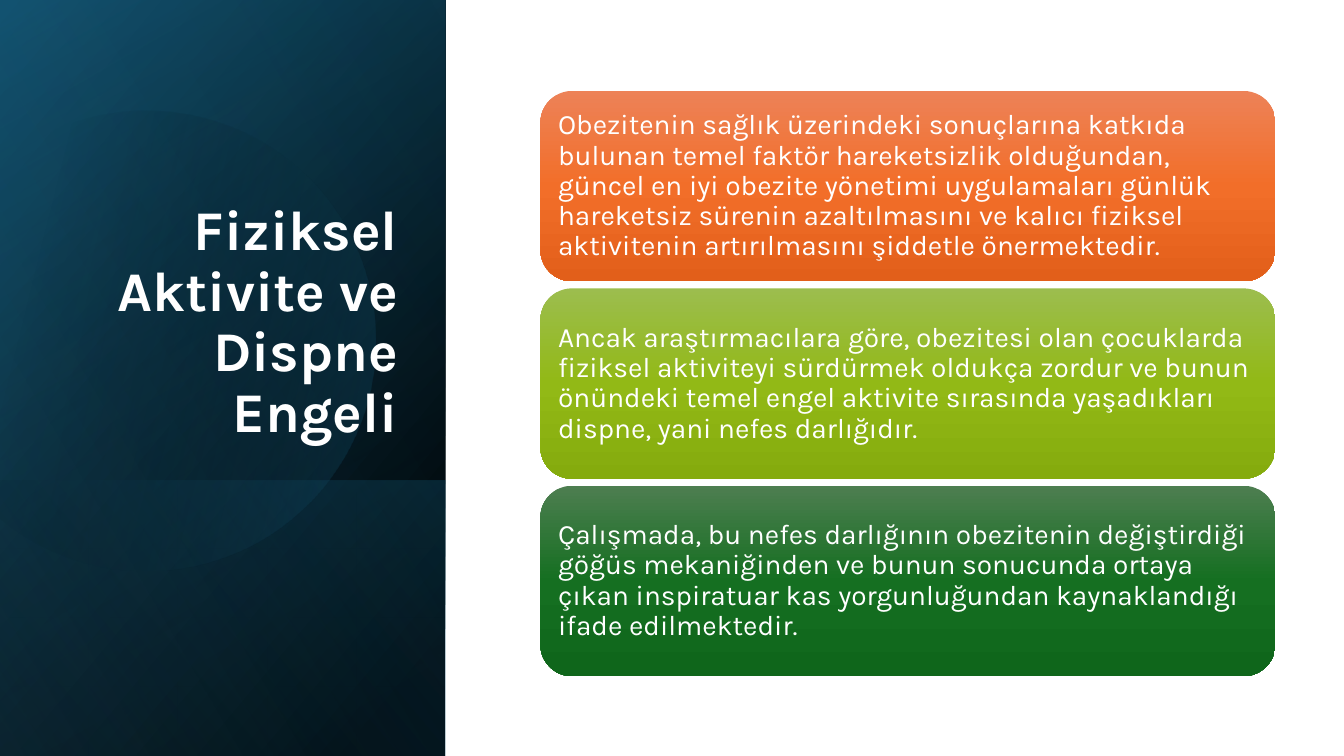
from math import cos, sin, radians
from lxml.etree import SubElement as Sub
from pptx import Presentation
from pptx.dml.color import RGBColor
from pptx.enum.shapes import MSO_SHAPE as Kind
from pptx.enum.text import MSO_ANCHOR as Anchor, MSO_AUTO_SIZE as Fit, PP_ALIGN as Align
from pptx.oxml.ns import qn
from pptx.util import Pt

WIDE, HIGH = 960, 540
SIDE = 318
TITLE = "Fiziksel Aktivite ve Dispne Engeli"
CARDS = [
    ("Obezitenin sağlık üzerindeki sonuçlarına katkıda bulunan temel faktör "
     "hareketsizlik olduğundan, güncel en iyi obezite yönetimi uygulamaları günlük "
     "hareketsiz sürenin azaltılmasını ve kalıcı fiziksel aktivitenin artırılmasını "
     "şiddetle önermektedir.", ("ED8257", "F26E29", "E25F1A")),
    ("Ancak araştırmacılara göre, obezitesi olan çocuklarda fiziksel aktiviteyi "
     "sürdürmek oldukça zordur ve bunun önündeki temel engel aktivite sırasında "
     "yaşadıkları dispne, yani nefes darlığıdır.", ("9CBD4E", "92B916", "85AB0D")),
    ("Çalışmada, bu nefes darlığının obezitenin değiştirdiği göğüs mekaniğinden ve "
     "bunun sonucunda ortaya çıkan inspiratuar kas yorgunluğundan kaynaklandığı "
     "ifade edilmektedir.", ("4D7E50", "156F21", "0F661B")),
]


def color(code):
    return RGBColor.from_string(code)


def shade(shape, stops, angle):
    """Fill with a gradient of (place, colour, opacity) stops, in percent."""
    shape.shadow.inherit = False
    shape.line.fill.background()
    shape.fill.background()
    old = shape.element.spPr.find(qn("a:noFill"))
    grad = old.makeelement(qn("a:gradFill"), {"rotWithShape": "1"})
    old.getparent().replace(old, grad)
    row = Sub(grad, qn("a:gsLst"))
    for place, code, part in stops:
        stop = Sub(row, qn("a:gs"), pos=str(place * 1000))
        tint = Sub(stop, qn("a:srgbClr"), val=str(color(code)))
        if part < 100:
            Sub(tint, qn("a:alpha"), val=str(part * 1000))
    Sub(grad, qn("a:lin"), ang=str(angle * 60000), scaled="0")


def write(shape, text, frame, para, font):
    """Put one paragraph in a shape, with formats given as dicts."""
    body = shape.text_frame
    body.text = text
    line = body.paragraphs[0]
    font = {"name": "Karla", **font}
    for item, look in ((body, frame), (line, para), (line.runs[0].font, font)):
        for key, value in look.items():
            setattr(item, key, value)
    line.runs[0].font.color.rgb = color("FFFFFF")


def turned(shapes, box, stops, angle):
    """Place a quarter-turned, mirrored rectangle that covers the box."""
    x, y, w, h = box
    rect = shapes.add_shape(Kind.RECTANGLE, Pt(x + (w - h) / 2),
                            Pt(y + (h - w) / 2), Pt(h), Pt(w))
    rect.rotation = 90
    rect.element.spPr.xfrm.set("flipH", "1")
    shade(rect, stops, angle)


def disc(shapes, x, y, r):
    """Draw a circle cut off by the left edge, tilted with its gradient."""
    tilt = 16.1
    rim = [radians(a + tilt) for a in range(-135, 136, 3)]
    dots = [(Pt(x + r * cos(a)), Pt(y + r * sin(a))) for a in rim]
    pen = shapes.build_freeform(*dots[0])
    pen.add_line_segments(dots[1:], close=True)
    shape = pen.convert_to_shape()
    shape.rotation = 360 - tilt
    shade(shape, [(29, "000000", 0), (100, "156082", 43)], 30)


def panel(slide, box):
    """Dark side panel with the title on top."""
    x, y, w, h = box
    shapes = slide.shapes
    low = (x, y + h - 197, w, 197)
    # Background layers
    turned(shapes, box, [(8, "000000", 100), (100, "104862", 100)], 50)
    turned(shapes, box, [(0, "000000", 0), (99, "156082", 46)], 30)
    turned(shapes, low, [(2, "156082", 29), (100, "000000", 30)], 130)
    disc(shapes, x + 104, y + 240.5, 164)
    turned(shapes, box, [(0, "000000", 0), (99, "46B1E1", 11)], 120)
    # Title, brought to the front
    title = shapes.title
    title.element.getparent().append(title.element)
    place = dict(left=x + 46, top=y + 132.5, width=w - 72.5, height=188.5)
    for key, value in place.items():
        setattr(title, key, Pt(value))
    write(title, TITLE,
          dict(word_wrap=True, auto_size=Fit.NONE, vertical_anchor=Anchor.BOTTOM),
          dict(alignment=Align.RIGHT, line_spacing=0.9),
          dict(size=Pt(40), bold=True))


def cards(slide, box, gap):
    """Stack of equal rounded cards."""
    x, y, w, h = box
    tall = (h - gap * (len(CARDS) - 1)) / len(CARDS)
    sides = ("left", "top", "right", "bottom")
    frame = dict(word_wrap=True, vertical_anchor=Anchor.MIDDLE,
                 **{"margin_" + side: Pt(6) for side in sides})
    for i, (text, tones) in enumerate(CARDS):
        card = slide.shapes.add_shape(Kind.ROUNDED_RECTANGLE, Pt(x),
                                      Pt(y + i * (tall + gap)), Pt(w), Pt(tall))
        shade(card, [(50 * n, tone, 100) for n, tone in enumerate(tones)], 90)
        write(card, text, frame, dict(alignment=Align.LEFT, line_spacing=0.9),
              dict(size=Pt(20)))


def main():
    deck = Presentation()
    deck.slide_width, deck.slide_height = Pt(WIDE), Pt(HIGH)
    slide = deck.slides.add_slide(deck.slide_layouts[5])
    panel(slide, (0, 0, SIDE, HIGH))
    cards(slide, (386, 65, 525, 418), 5)
    deck.save("out.pptx")


if __name__ == "__main__":
    main()
